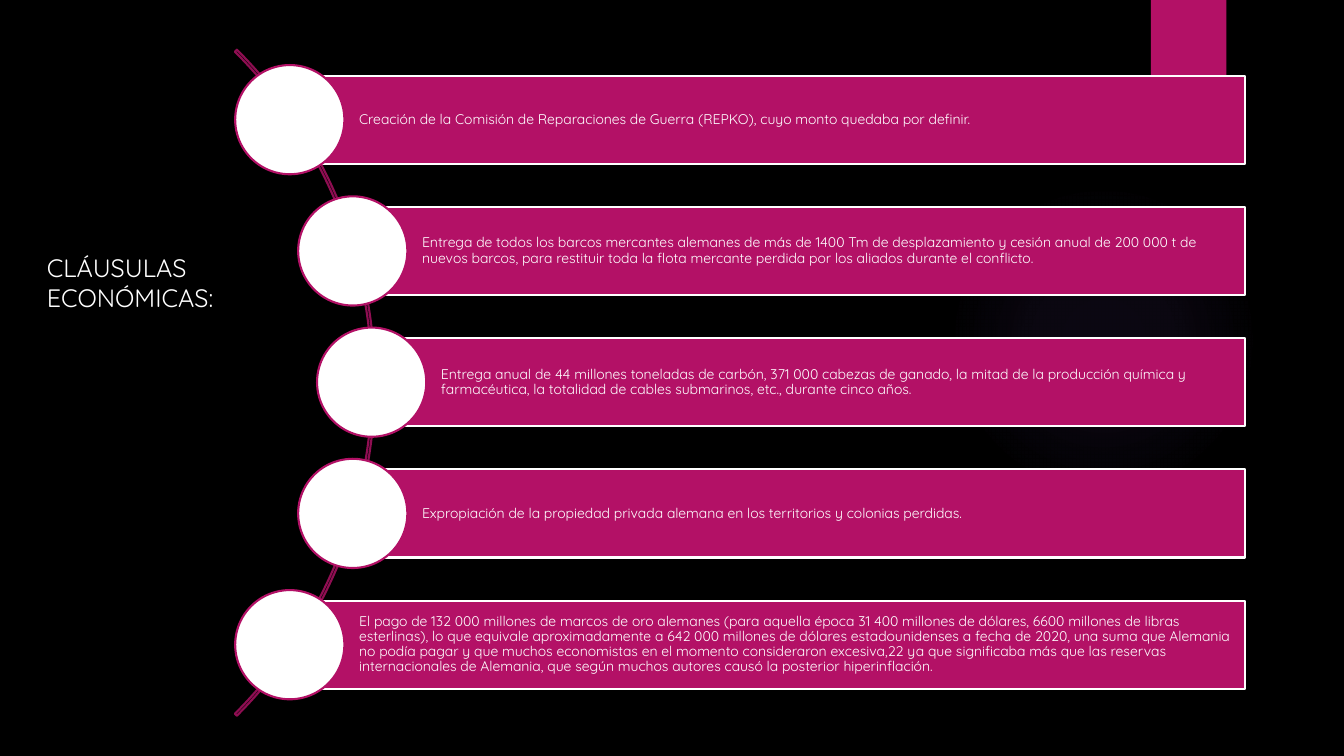
"""Build the slide on the economic clauses: a curved list of five items."""
import pptx
import pptx.dml.color
import pptx.enum.shapes
import pptx.enum.text
import pptx.oxml
import pptx.oxml.ns
import pptx.util

PIXEL = 9525
COLORS = {
    "background": "000000",
    "accent": "B31166",
    "arc": "8F0E52",
    "white": "FFFFFF",
    "glow": "9B6BF2",
}
SHAPES = pptx.enum.shapes.MSO_SHAPE
MIDDLE = pptx.enum.text.MSO_ANCHOR.MIDDLE
LEFT = pptx.enum.text.PP_ALIGN.LEFT

BAR_RIGHT, BAR_TOP, BAR_HEIGHT, BAR_PITCH = 1186, 72, 84, 125
CIRCLE_SIZE = 104
GLOW_STOPS = [(0, 7), (36, 6), (69, 0)]

CLAUSES = [
    (276, "Creación de la Comisión de Reparaciones de Guerra (REPKO), cuyo monto "
          "quedaba por definir."),
    (336, "Entrega de todos los barcos mercantes alemanes de más de 1400 Tm de "
          "desplazamiento y cesión anual de 200 000 t de nuevos barcos, para "
          "restituir toda la flota mercante perdida por los aliados durante el "
          "conflicto."),
    (354, "Entrega anual de 44 millones toneladas de carbón, 371 000 cabezas de "
          "ganado, la mitad de la producción química y farmacéutica, la totalidad "
          "de cables submarinos, etc., durante cinco años."),
    (336, "Expropiación de la propiedad privada alemana en los territorios y "
          "colonias perdidas."),
    (276, "El pago de 132 000 millones de marcos de oro alemanes (para aquella "
          "época 31 400 millones de dólares, 6600 millones de libras esterlinas), "
          "lo que equivale aproximadamente a 642 000 millones de dólares "
          "estadounidenses a fecha de 2020, una suma que Alemania no podía pagar y "
          "que muchos economistas en el momento consideraron excesiva,22 ya que "
          "significaba más que las reservas internacionales de Alemania, que según "
          "muchos autores causó la posterior hiperinflación."),
]


def px(length):
    return pptx.util.Emu(length * PIXEL)


def rgb(name):
    return pptx.dml.color.RGBColor.from_string(COLORS[name])


def set_attributes(target, values):
    for name, value in values.items():
        setattr(target, name, value)


def add_shape(slide, kind, box, fill=None, line=None):
    shape = slide.shapes.add_shape(kind, *map(px, box))
    shape.shadow.inherit = False
    if fill:
        shape.fill.solid()
        shape.fill.fore_color.rgb = rgb(fill)
    else:
        shape.fill.background()
    if line:
        shape.line.color.rgb = rgb(line)
        shape.line.width = pptx.util.Pt(1.5)
    else:
        shape.line.fill.background()
    return shape


def write_text(shape, text, size, frame_values, paragraph_values):
    frame = shape.text_frame
    frame.text = text
    set_attributes(frame, {"word_wrap": True, "vertical_anchor": MIDDLE, **frame_values})
    paragraph = frame.paragraphs[0]
    set_attributes(paragraph, {"alignment": LEFT, **paragraph_values})
    set_attributes(paragraph.font, {"name": "Quicksand", "size": pptx.util.Pt(size)})
    paragraph.font.color.rgb = rgb("white")


def add_glow(slide, box):
    shape = add_shape(slide, SHAPES.OVAL, box)
    stops = "".join(
        f'<a:gs pos="{position * 1000}"><a:srgbClr val="{COLORS["glow"]}">'
        f'<a:alpha val="{alpha * 1000}"/></a:srgbClr></a:gs>'
        for position, alpha in GLOW_STOPS
    )
    gradient = pptx.oxml.parse_xml(
        f'<a:gradFill {pptx.oxml.ns.nsdecls("a")}><a:gsLst>{stops}</a:gsLst>'
        '<a:path path="circle"><a:fillToRect l="50000" t="50000" r="50000" b="50000"/>'
        "</a:path></a:gradFill>"
    )
    properties = shape.element.spPr
    properties.replace(properties.find(pptx.oxml.ns.qn("a:noFill")), gradient)


def add_arc(slide, box):
    arc = add_shape(slide, SHAPES.BLOCK_ARC, box, line="arc")
    for index, value in enumerate((189, 27, 0.003)):
        arc.adjustments[index] = value


def add_clause(slide, row, left, text):
    top = BAR_TOP + row * BAR_PITCH
    bar_box = (left, top, BAR_RIGHT - left, BAR_HEIGHT)
    bar = add_shape(slide, SHAPES.RECTANGLE, bar_box, "accent", "white")
    insets = {"margin_left": px(66), "margin_right": px(3),
              "margin_top": px(3), "margin_bottom": px(3)}
    write_text(bar, text, 10, insets, {"line_spacing": 0.9})
    radius = CIRCLE_SIZE // 2
    circle_box = (left - radius, top + BAR_HEIGHT // 2 - radius, CIRCLE_SIZE, CIRCLE_SIZE)
    add_shape(slide, SHAPES.OVAL, circle_box, "white", "accent")


def add_title(slide, text, box):
    title = slide.shapes.title
    set_attributes(title, dict(zip(("left", "top", "width", "height"), map(px, box))))
    no_autofit = {"auto_size": pptx.enum.text.MSO_AUTO_SIZE.NONE}
    write_text(title, text, 18, no_autofit, {})


def main():
    presentation = pptx.Presentation()
    set_attributes(presentation, {"slide_width": px(1280), "slide_height": px(720)})
    slide = presentation.slides.add_slide(presentation.slide_layouts[5])
    slide.background.fill.solid()
    slide.background.fill.fore_color.rgb = rgb("background")
    add_title(slide, "CLÁUSULAS ECONÓMICAS:", (35, 235, 212, 68))
    add_glow(slide, (903, 176, 296, 296))
    add_shape(slide, SHAPES.RECTANGLE, (1096, 0, 72, 120), "accent")
    add_arc(slide, (-540, -84, 897, 897))
    for row, (left, text) in enumerate(CLAUSES):
        add_clause(slide, row, left, text)
    presentation.save("out.pptx")


if __name__ == "__main__":
    main()
